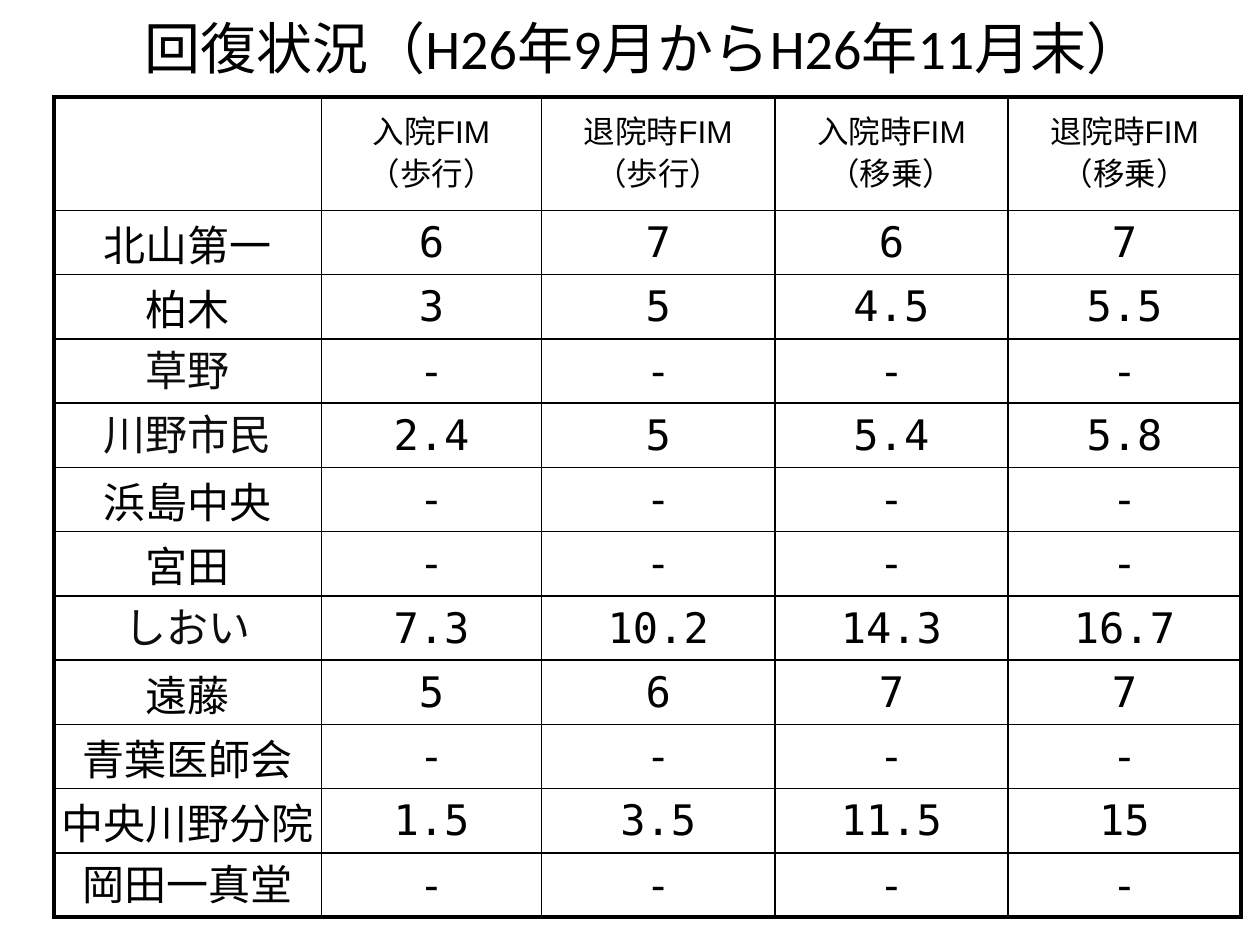
from lxml import etree
from pptx import Presentation
from pptx.dml.color import RGBColor
from pptx.enum import text
from pptx.oxml import ns
from pptx.util import Inches, Pt

COLORS = {"text": "000000", "soft": "0D0D0D", "border": "000000"}
KANJI, MONO = "Noto Sans CJK JP", "DejaVu Sans Mono"


def write(tf, lines, *, size, font, color="text", before=0):
    """Fill a text frame with centred paragraphs, one per line."""
    for i, line in enumerate(lines.split("\n")):
        p = tf.paragraphs[0] if i == 0 else tf.add_paragraph()
        p.alignment = text.PP_ALIGN.CENTER
        p.space_before = Pt(before)
        r = p.add_run()
        r.text = line
        r.font.size = Pt(size)
        r.font.name = font
        r.font.color.rgb = RGBColor.from_string(COLORS[color])
        ea = etree.SubElement(r.font._element, ns.qn("a:ea"))
        ea.set("typeface", font)


def set_borders(cell, **widths):
    """Draw the cell's sides, given as L, R, T and B widths in points."""
    tc_pr = cell._tc.get_or_add_tcPr()
    for side, width in widths.items():
        ln = etree.SubElement(tc_pr, ns.qn(f"a:ln{side}"), w=str(Pt(width)))
        fill = etree.SubElement(ln, ns.qn("a:solidFill"))
        etree.SubElement(fill, ns.qn("a:srgbClr"), val=COLORS["border"])


prs = Presentation()
prs.slide_width, prs.slide_height = Inches(10), Inches(7.5)
s = prs.slides.add_slide(prs.slide_layouts[5])

title = s.shapes.title
title.left, title.top = Inches(0.61), Inches(0.06)
title.width, title.height = Inches(9), Inches(1.25)
title.text_frame.vertical_anchor = text.MSO_ANCHOR.TOP
write(title.text_frame, "回復状況（H26年9月からH26年11月末）", size=32, font="Calibri")

headers = ["", "入院FIM\n（歩行）", "退院時FIM\n（歩行）", "入院時FIM\n（移乗）", "退院時FIM\n（移乗）"]
hospitals = [
    ["北山第一", "6", "7", "6", "7"],
    ["柏木", "3", "5", "4.5", "5.5"],
    ["草野", "-", "-", "-", "-"],
    ["川野市民", "2.4", "5", "5.4", "5.8"],
    ["浜島中央", "-", "-", "-", "-"],
    ["宮田", "-", "-", "-", "-"],
    ["しおい", "7.3", "10.2", "14.3", "16.7"],
    ["遠藤", "5", "6", "7", "7"],
    ["青葉医師会", "-", "-", "-", "-"],
    ["中央川野分院", "1.5", "3.5", "11.5", "15"],
    ["岡田一真堂", "-", "-", "-", "-"],
]
arial_rows = {3: "soft", 4: "soft", 7: "soft", 11: "text"}
rows = [headers] + hospitals
col_widths = [2.12, 1.75, 1.85, 1.85, 1.85]
row_heights = [0.9] + [0.51] * len(hospitals)
last_row, last_col = len(rows) - 1, len(headers) - 1

frame = s.shapes.add_table(len(rows), len(headers), Inches(0.43), Inches(0.77),
                           Inches(sum(col_widths)), Inches(sum(row_heights)))
table = frame.table
table.first_row = table.horz_banding = False
for col, width in zip(table.columns, col_widths):
    col.width = Inches(width)
for row, height in zip(table.rows, row_heights):
    row.height = Inches(height)

for i, values in enumerate(rows):
    for j, value in enumerate(values):
        cell = table.cell(i, j)
        cell.vertical_anchor = text.MSO_ANCHOR.MIDDLE
        if i > 0:
            cell.margin_left = cell.margin_right = cell.margin_top = Inches(0.01)
            cell.margin_bottom = 0
        set_borders(cell, L=3 if j == 0 else 1, R=3 if j == last_col else 1,
                    T=3 if i == 0 else 1, B=3 if i == last_row else 1)
        cell.fill.background()
        if i == 0:
            if value:
                write(cell.text_frame, value, size=18, font="Arial", before=3.6)
        elif j > 0:
            write(cell.text_frame, value, size=24, font=MONO)
        else:
            write(cell.text_frame, value, size=24, color=arial_rows.get(i, "text"),
                  font="Arial" if i in arial_rows else KANJI)

prs.save("out.pptx")
